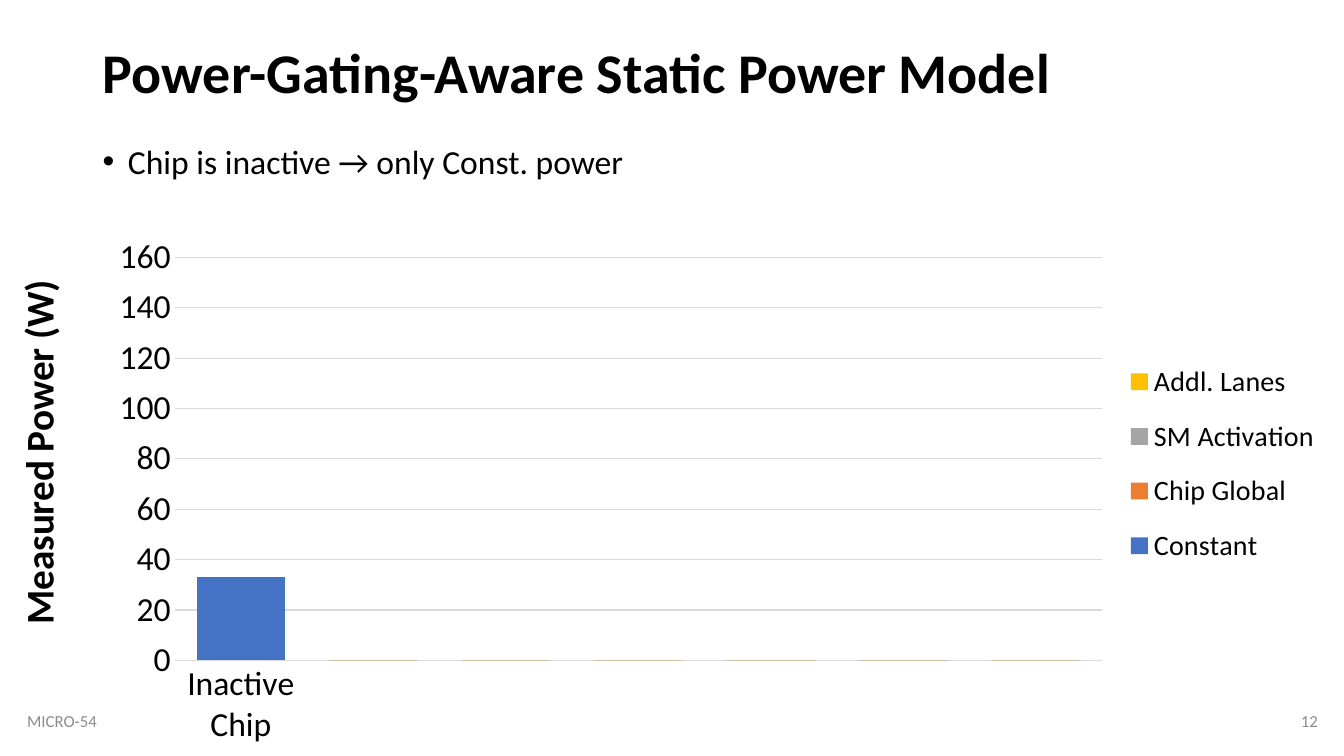
from dataclasses import dataclass

from lxml import etree
from pptx import Presentation
from pptx.chart.data import CategoryChartData
from pptx.dml.color import RGBColor
from pptx.enum.chart import XL_CHART_TYPE as ChartType
from pptx.enum.chart import XL_LEGEND_POSITION as LegendPosition
from pptx.enum.chart import XL_TICK_MARK as TickMark
from pptx.enum.text import MSO_ANCHOR as Anchor
from pptx.enum.text import PP_ALIGN as Align
from pptx.oxml.ns import qn
from pptx.util import Inches, Pt


@dataclass(frozen=True)
class Theme:
    font: str = "Calibri"
    black: str = "000000"
    muted: str = "8C8C8C"
    grid: str = "D9D9D9"
    title: int = 40
    axis_title: int = 28
    body: int = 24
    legend: int = 20
    footer: int = 12


theme = Theme()


def write(frame, text, size=theme.body, color=theme.black, bold=False,
          align=Align.LEFT, anchor=Anchor.TOP, spacing=None, bullet=False):
    frame.word_wrap = True
    frame.vertical_anchor = anchor
    para = frame.paragraphs[0]
    para.alignment = align
    para.line_spacing = spacing
    if bullet:
        properties = para._p.get_or_add_pPr()
        properties.set("marL", str(Inches(0.25)))
        properties.set("indent", str(Inches(-0.25)))
        etree.SubElement(properties, qn("a:buFont"), typeface="Arial")
        etree.SubElement(properties, qn("a:buChar"), char="•")
    span = para.add_run()
    span.text = text
    span.font.name = theme.font
    span.font.size = Pt(size)
    span.font.bold = bold
    span.font.color.rgb = RGBColor.from_string(color)


def place(parent, index, **values):
    layout = parent.find(qn("c:layout"))
    if layout is None:
        layout = etree.Element(qn("c:layout"))
        parent.insert(index, layout)
    manual = etree.SubElement(layout, qn("c:manualLayout"))
    for name, value in values.items():
        etree.SubElement(manual, qn(f"c:{name}"), val=str(value))


deck = Presentation()
deck.slide_width, deck.slide_height = Inches(13.33), Inches(7.5)
page = deck.slides.add_slide(deck.slide_layouts[5])

title = page.shapes.title
title.left, title.top = Inches(0.92), Inches(0.4)
title.width, title.height = Inches(11.5), Inches(1.45)
write(title.text_frame, "Power-Gating-Aware Static Power Model",
      size=theme.title, bold=True, spacing=0.9)

series_colors = {
    "Constant": "4472C4",
    "Chip Global": "ED7D31",
    "SM Activation": "A5A5A5",
    "Addl. Lanes": "FFC000",
}
data = CategoryChartData()
data.categories = ["Inactive Chip"] + [""] * 6
for name in series_colors:
    data.add_series(name, [33 if name == "Constant" else 0] + [0] * 6)

chart = page.shapes.add_chart(
    ChartType.COLUMN_STACKED, Inches(0.05), Inches(2.25),
    Inches(13.24), Inches(5.26), data).chart
chart.has_title = False
chart.font.name = theme.font
chart.font.size = Pt(theme.body)
chart.font.color.rgb = RGBColor.from_string(theme.black)

plot = chart.plots[0]
plot.gap_width, plot.overlap = 50, 100
plot.vary_by_categories = False
for series, color in zip(plot.series, series_colors.values()):
    series.format.fill.solid()
    series.format.fill.fore_color.rgb = RGBColor.from_string(color)

power, chips = chart.value_axis, chart.category_axis
for axis in (power, chips):
    axis.major_tick_mark = axis.minor_tick_mark = TickMark.NONE
power.minimum_scale, power.maximum_scale, power.major_unit = 0, 160, 20
power.format.line.fill.background()
for line in (power.major_gridlines.format.line, chips.format.line):
    line.width = Pt(0.75)
    line.color.rgb = RGBColor.from_string(theme.grid)
write(power.axis_title.text_frame, "Measured Power (W)",
      size=theme.axis_title, bold=True, align=Align.CENTER)
frame_properties = power.axis_title.text_frame._txBody.find(qn("a:bodyPr"))
frame_properties.set("rot", "-5400000")
frame_properties.set("vert", "horz")

chart.has_legend = True
legend = chart.legend
legend.position = LegendPosition.RIGHT
legend.include_in_layout = False
legend.font.name = theme.font
legend.font.size = Pt(theme.legend)
legend.font.color.rgb = RGBColor.from_string(theme.black)

place(chart._chartSpace.chart.plotArea, 0, layoutTarget="inner",
      xMode="edge", yMode="edge", x=0.127, y=0.058, w=0.695, h=0.76)
place(power.axis_title._element, 1, xMode="edge", yMode="edge", x=0, y=0.087)
place(legend._element, 1, xMode="edge", yMode="edge",
      x=0.832, y=0.222, w=0.16, h=0.45)

texts = [
    ("MICRO-54", (0.17, 6.95, 1.05, 0.4),
     dict(size=theme.footer, color=theme.muted, anchor=Anchor.MIDDLE)),
    ("12", (12.74, 6.95, 0.43, 0.4),
     dict(size=theme.footer, color=theme.muted, anchor=Anchor.MIDDLE,
          align=Align.RIGHT)),
    ("Chip is inactive → only Const. power", (0.92, 1.39, 10.55, 0.91),
     dict(spacing=0.9, bullet=True)),
]
for text, bounds, style in texts:
    box = page.shapes.add_textbox(*map(Inches, bounds))
    write(box.text_frame, text, **style)

deck.save("out.pptx")
